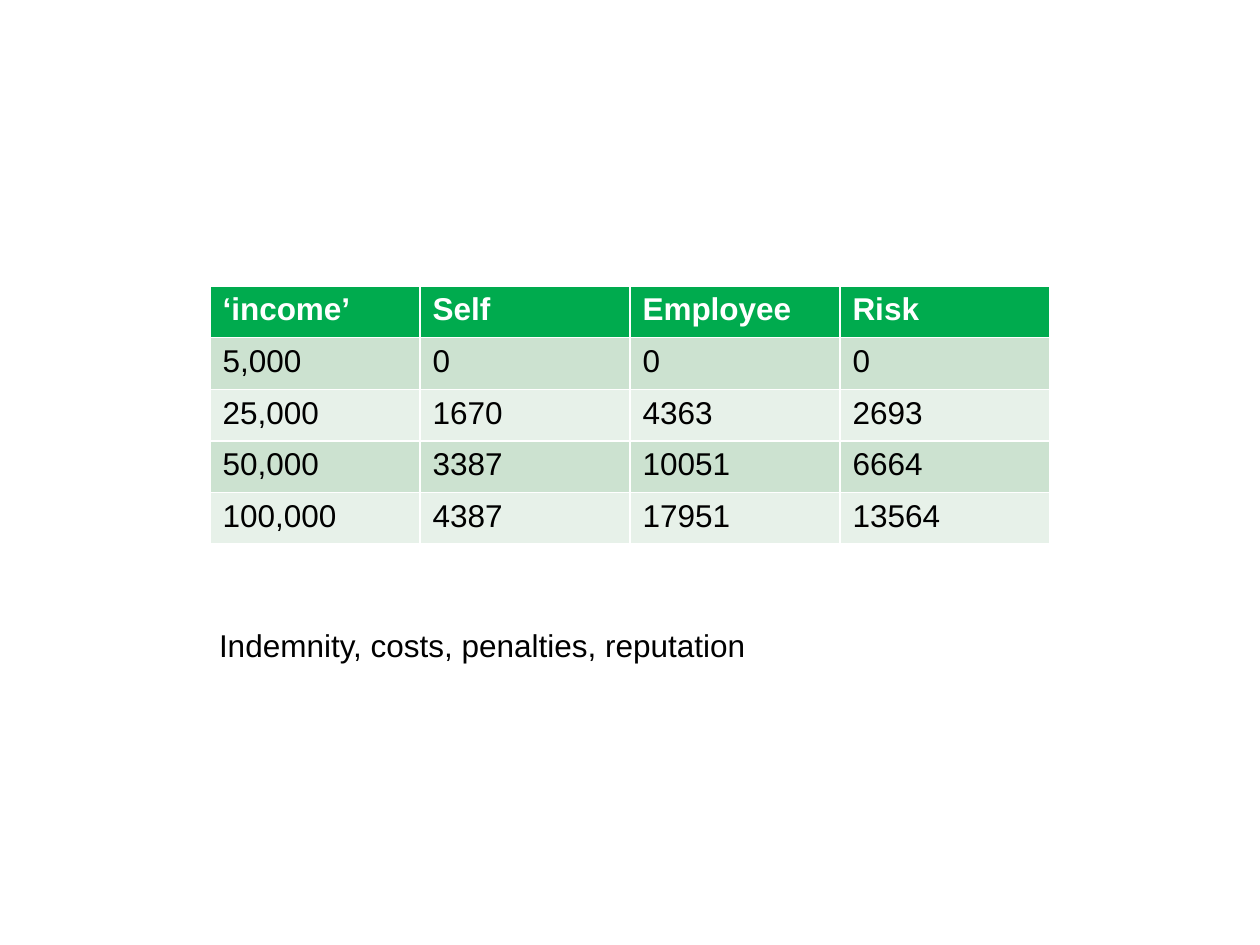
"""Build a slide with an income and risk table above a one-line note."""
from pptx import Presentation
from pptx import util as u
from pptx.dml.color import RGBColor

HEADINGS = ["‘income’", "Self", "Employee", "Risk"]
INCOMES = [
    ["5,000", "0", "0", "0"],
    ["25,000", "1670", "4363", "2693"],
    ["50,000", "3387", "10051", "6664"],
    ["100,000", "4387", "17951", "13564"],
]
NOTE = "Indemnity, costs, penalties, reputation"

THEME = {
    "font": "Arial",
    "size": u.Pt(18),
    "heading_fill": "00AB4E",
    "heading_text": "FFFFFF",
    "bands": ["CCE2D0", "E7F1E9"],
    "text": "000000",
}
WIDTH, HEIGHT = u.Inches(10), u.Inches(7.5)
ROW_HEIGHT = u.Inches(0.41)


def write(frame, words, color, bold=False):
    frame.text = words
    font = frame.paragraphs[0].runs[0].font
    font.name, font.size, font.bold = THEME["font"], THEME["size"], bold
    font.color.rgb = RGBColor.from_string(color)


def add_income_table(slide):
    rows = [HEADINGS] + INCOMES
    table = slide.shapes.add_table(
        len(rows), len(HEADINGS), WIDTH // 6, u.Inches(2.27),
        WIDTH * 2 // 3, ROW_HEIGHT * len(rows)).table
    for r, row in enumerate(rows):
        heading = r == 0
        fill = THEME["heading_fill"] if heading else THEME["bands"][(r - 1) % 2]
        color = THEME["heading_text"] if heading else THEME["text"]
        for c, words in enumerate(row):
            cell = table.cell(r, c)
            cell.fill.solid()
            cell.fill.fore_color.rgb = RGBColor.from_string(fill)
            write(cell.text_frame, words, color, heading)


def add_note(slide):
    note = slide.shapes.add_textbox(
        u.Inches(1.64), u.Inches(4.92), WIDTH * 0.68, u.Inches(0.4))
    note.text_frame.word_wrap = True
    write(note.text_frame, NOTE, THEME["text"])


def main():
    deck = Presentation()
    deck.slide_width, deck.slide_height = WIDTH, HEIGHT
    slide = deck.slides.add_slide(deck.slide_layouts[6])
    add_income_table(slide)
    add_note(slide)
    deck.save("out.pptx")


if __name__ == "__main__":
    main()
